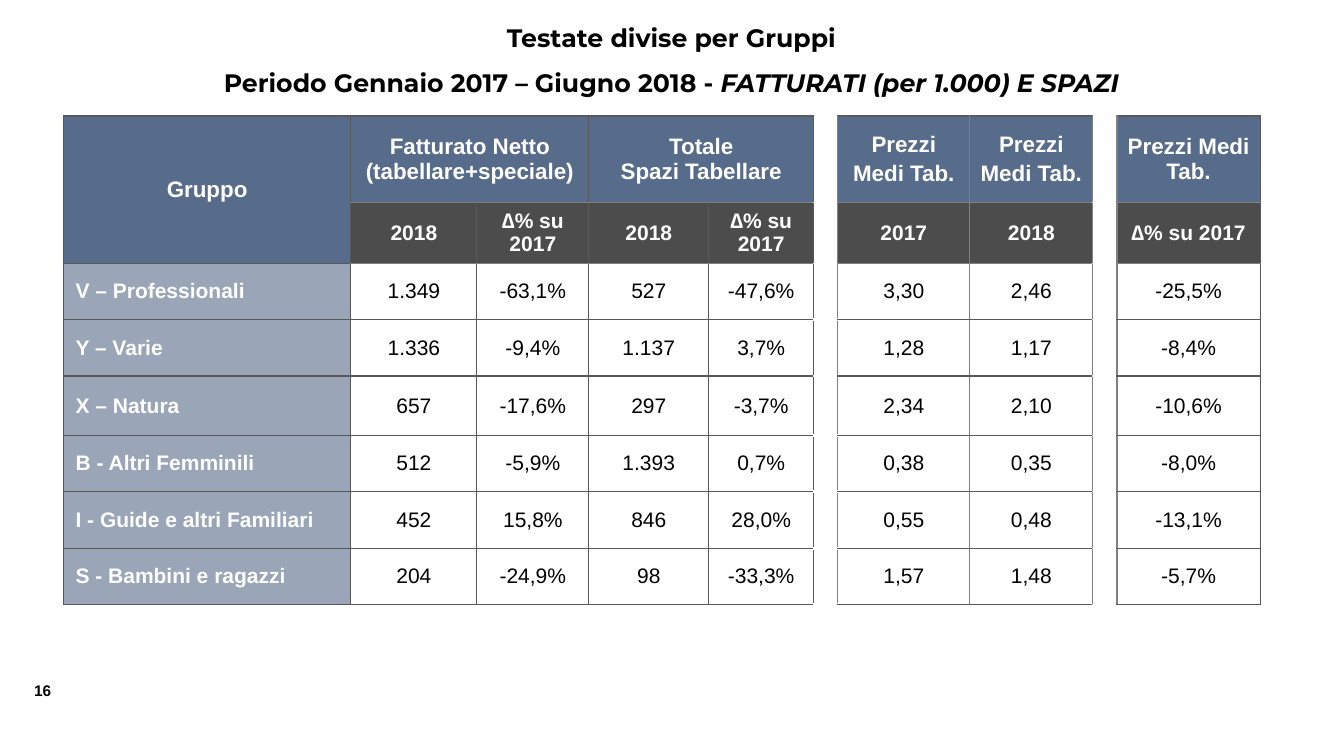
import pptx
import pptx.util
import pptx.dml.color
import pptx.enum.text
import lxml.etree

Inches, Pt = pptx.util.Inches, pptx.util.Pt
ALIGN = pptx.enum.text.PP_ALIGN
MIDDLE = pptx.enum.text.MSO_ANCHOR.MIDDLE
NS = "http://schemas.openxmlformats.org/drawingml/2006/main"
BLUE, BLACK, WHITE = "576B8A", "000000", "FFFFFF"
DARK, GREY = "595959", "808080"


def style(font, size, color, bold=True, name="Arial"):
    font.name, font.size, font.bold = name, Pt(size), bold
    font.color.rgb = pptx.dml.color.RGBColor.from_string(color)


def paint(cell, color, alpha, edges):
    """Fill a cell (alpha in percent) and draw its (color, points) edges: left, right, top, bottom."""
    cell.fill.solid()
    cell.fill.fore_color.rgb = pptx.dml.color.RGBColor.from_string(color)
    props = cell._tc.tcPr
    if alpha < 100:
        tone = props.find(f".//{{{NS}}}srgbClr")
        lxml.etree.SubElement(tone, f"{{{NS}}}alpha", val=str(alpha * 1000))
    for spot, (side, (ink, width)) in enumerate(zip("LRTB", edges)):
        line = lxml.etree.Element(f"{{{NS}}}ln{side}", w=str(Pt(width)))
        solid = lxml.etree.SubElement(line, f"{{{NS}}}solidFill")
        lxml.etree.SubElement(solid, f"{{{NS}}}srgbClr", val=ink)
        props.insert(spot, line)


deck = pptx.Presentation()
deck.slide_width, deck.slide_height = Inches(13.33), Inches(7.5)
slide = deck.slides.add_slide(deck.slide_layouts[6])

# Page number
page = slide.shapes.add_textbox(Inches(0.24), Inches(6.71), Inches(0.42), Inches(0.29))
page.text_frame.text = "16"
style(page.text_frame.paragraphs[0].runs[0].font, 11, BLACK)

# Title
title = slide.shapes.add_textbox(Inches(1.11), Inches(0.02), Inches(11.1), Inches(1.07))
title.text_frame.word_wrap = True
title.text_frame.text = "Testate divise per Gruppi\vPeriodo Gennaio 2017 – Giugno 2018 - "
head = title.text_frame.paragraphs[0]
head.alignment, head.line_spacing = ALIGN.CENTER, 1.5
topic = head.add_run()
topic.text = "FATTURATI (per 1.000) E SPAZI"
topic.font.italic = True
for run in head.runs:
    style(run.font, 18, BLACK, name="Montserrat")

# Table: empty columns are the gaps between the three blocks
GAPS = (5, 8)
widths = [2.85, 1.25, 1.11, 1.19, 1.04, 0.24, 1.31, 1.22, 0.24, 1.42]
heights = [0.86, 0.6, 0.56, 0.56, 0.59, 0.56, 0.56, 0.56]
DELTA = "∆% su 2017"
rows = [
    ["Gruppo", "Fatturato Netto (tabellare+speciale)", "", "Totale\nSpazi Tabellare", "",
     "", "Prezzi\nMedi Tab.", "Prezzi\nMedi Tab.", "", "Prezzi Medi Tab."],
    ["", "2018", DELTA, "2018", DELTA, "", "2017", "2018", "", DELTA],
    ["V – Professionali", "1.349", "-63,1%", "527", "-47,6%", "", "3,30", "2,46", "", "-25,5%"],
    ["Y – Varie", "1.336", "-9,4%", "1.137", "3,7%", "", "1,28", "1,17", "", "-8,4%"],
    ["X – Natura", "657", "-17,6%", "297", "-3,7%", "", "2,34", "2,10", "", "-10,6%"],
    ["B - Altri Femminili", "512", "-5,9%", "1.393", "0,7%", "", "0,38", "0,35", "", "-8,0%"],
    ["I - Guide e altri Familiari", "452", "15,8%", "846", "28,0%", "", "0,55", "0,48", "", "-13,1%"],
    ["S - Bambini e ragazzi", "204", "-24,9%", "98", "-33,3%", "", "1,57", "1,48", "", "-5,7%"],
]
table = slide.shapes.add_table(len(rows), len(widths), Inches(0.63), Inches(1.15),
                               Inches(sum(widths)), Inches(sum(heights))).table
table.first_row = table.horz_banding = False
for col, width in zip(table.columns, widths):
    col.width = Inches(width)
for row, height in zip(table.rows, heights):
    row.height = Inches(height)
table.cell(0, 0).merge(table.cell(1, 0))
for c in (1, 3):
    table.cell(0, c).merge(table.cell(0, c + 1))

for r, texts in enumerate(rows):
    for c, text in enumerate(texts):
        cell = table.cell(r, c)
        if cell.is_spanned:
            continue
        body, label = r > 1, c == 0
        if c in GAPS:
            fill, alpha = WHITE, 100
        elif r == 0:
            fill, alpha = BLUE, 100
        elif r == 1:
            fill, alpha = BLACK, 70
        else:
            fill, alpha = (BLUE, 60) if label else (WHITE, 100)

        edges = [(GREY if 6 <= k <= 9 else DARK, 1) for k in (c, c + 1)]
        for k in (r, r + 1):
            if c in GAPS:
                edges.append((WHITE, 2.25 if c == 5 and k > 2 else 1))
            else:
                edges.append((GREY if k in (1, 2) and not label else DARK, 1))
        paint(cell, fill, alpha, edges)

        if not text:
            continue
        cell.vertical_anchor = MIDDLE
        if body:
            cell.margin_left = Inches(0.12 if label else 0)
            cell.margin_right = cell.margin_top = cell.margin_bottom = 0
        cell.text_frame.text = text
        for n, para in enumerate(cell.text_frame.paragraphs):
            para.alignment = ALIGN.LEFT if body and label else ALIGN.CENTER
            if n and c > 5:
                para.space_before = Pt(3.2)
            plain = body and not label
            style(para.runs[0].font, 15 if r else 16, BLACK if plain else WHITE, not plain)

deck.save("out.pptx")
